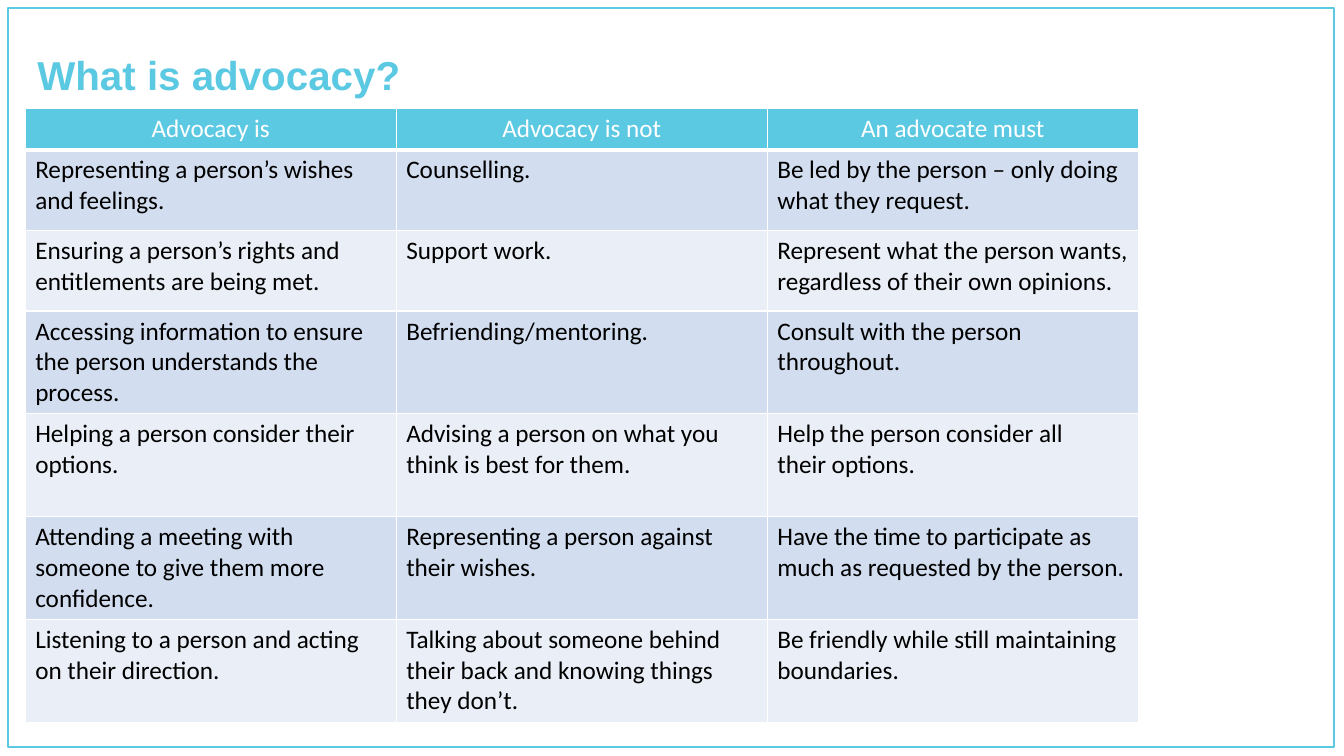
"""Build the advocacy slide: a framed title and a three-column table."""
from lxml import etree
from pptx import Presentation
from pptx.dml.color import RGBColor
from pptx.enum.shapes import MSO_SHAPE
from pptx.enum.text import MSO_ANCHOR, MSO_AUTO_SIZE, PP_ALIGN
from pptx.oxml.ns import qn
from pptx.util import Inches, Pt

RECT = MSO_SHAPE.RECTANGLE
BOTTOM = MSO_ANCHOR.BOTTOM
FIXED = MSO_AUTO_SIZE.NONE
LEFT, CENTER = PP_ALIGN.LEFT, PP_ALIGN.CENTER

TITLE = "What is advocacy?"
ROWS = [
    ("Advocacy is", "Advocacy is not", "An advocate must"),
    ("Representing a person’s wishes and feelings.",
     "Counselling.",
     "Be led by the person – only doing what they request."),
    ("Ensuring a person’s rights and entitlements are being met.",
     "Support work.",
     "Represent what the person wants, regardless of their own opinions."),
    ("Accessing information to ensure the person understands the process.",
     "Befriending/mentoring.",
     "Consult with the person throughout."),
    ("Helping a person consider their options.",
     "Advising a person on what you think is best for them.",
     "Help the person consider all \vtheir options."),
    ("Attending a meeting with someone to give them more confidence.",
     "Representing a person against their wishes.",
     "Have the time to participate as much as requested by the person."),
    ("Listening to a person and acting on their direction.",
     "Talking about someone behind their back and knowing things they don’t.",
     "Be friendly while still maintaining boundaries."),
]
HEIGHTS = [0.4] + [0.8] * 2 + [1.02] * 4
WIDTH = 3.68
COLORS = {"aqua": "5CC9E3", "odd": "D2DEEF", "even": "EAEFF7",
          "white": "FFFFFF", "black": "000000"}


def color(name):
    return RGBColor.from_string(COLORS[name])


def border(cell, base):
    props = cell._tc.get_or_add_tcPr()
    for side, width in (("L", 1), ("R", 1), ("T", 1), ("B", base)):
        line = etree.SubElement(props, qn("a:ln" + side), w=str(Pt(width)))
        fill = etree.SubElement(line, qn("a:solidFill"))
        etree.SubElement(fill, qn("a:srgbClr"), val=COLORS["white"])


def style(para, font, size, tint, align=LEFT, bold=False):
    para.alignment = align
    para.font.name = font
    para.font.size = Pt(size)
    para.font.bold = bold
    para.font.color.rgb = color(tint)


def add_frame(slide):
    frame = slide.shapes.add_shape(
        RECT, Inches(0.08), Inches(0.08), Inches(13.15), Inches(7.33))
    frame.shadow.inherit = False
    frame.fill.background()
    frame.line.color.rgb = color("aqua")
    frame.line.width = Pt(1)


def add_title(slide):
    title = slide.shapes.title
    title.left, title.top = Inches(0.27), Inches(0.49)
    title.width, title.height = Inches(10.48), Inches(0.54)
    text = title.text_frame
    text.text = TITLE
    text.word_wrap = True
    text.auto_size = FIXED
    text.vertical_anchor = BOTTOM
    para = text.paragraphs[0]
    para.line_spacing = 0.9
    style(para, "Arial", 28.8, "aqua", bold=True)


def add_grid(slide):
    count = len(ROWS[0])
    table = slide.shapes.add_table(
        len(ROWS), count, Inches(0.25), Inches(1.08),
        Inches(WIDTH * count), Inches(sum(HEIGHTS))).table
    for col in table.columns:
        col.width = Inches(WIDTH)
    for i, row in enumerate(ROWS):
        table.rows[i].height = Inches(HEIGHTS[i])
        head = i == 0
        shade = "aqua" if head else "odd" if i % 2 else "even"
        for j, words in enumerate(row):
            cell = table.cell(i, j)
            cell.text = words
            border(cell, 3 if head else 1)
            cell.fill.solid()
            cell.fill.fore_color.rgb = color(shade)
            style(cell.text_frame.paragraphs[0], "Calibri", 18,
                  "white" if head else "black", CENTER if head else LEFT)


def main():
    deck = Presentation()
    deck.slide_width, deck.slide_height = Inches(13.33), Inches(7.5)
    slide = deck.slides.add_slide(deck.slide_layouts.get_by_name("Title Only"))
    add_frame(slide)
    add_title(slide)
    add_grid(slide)
    deck.save("out.pptx")


if __name__ == "__main__":
    main()
